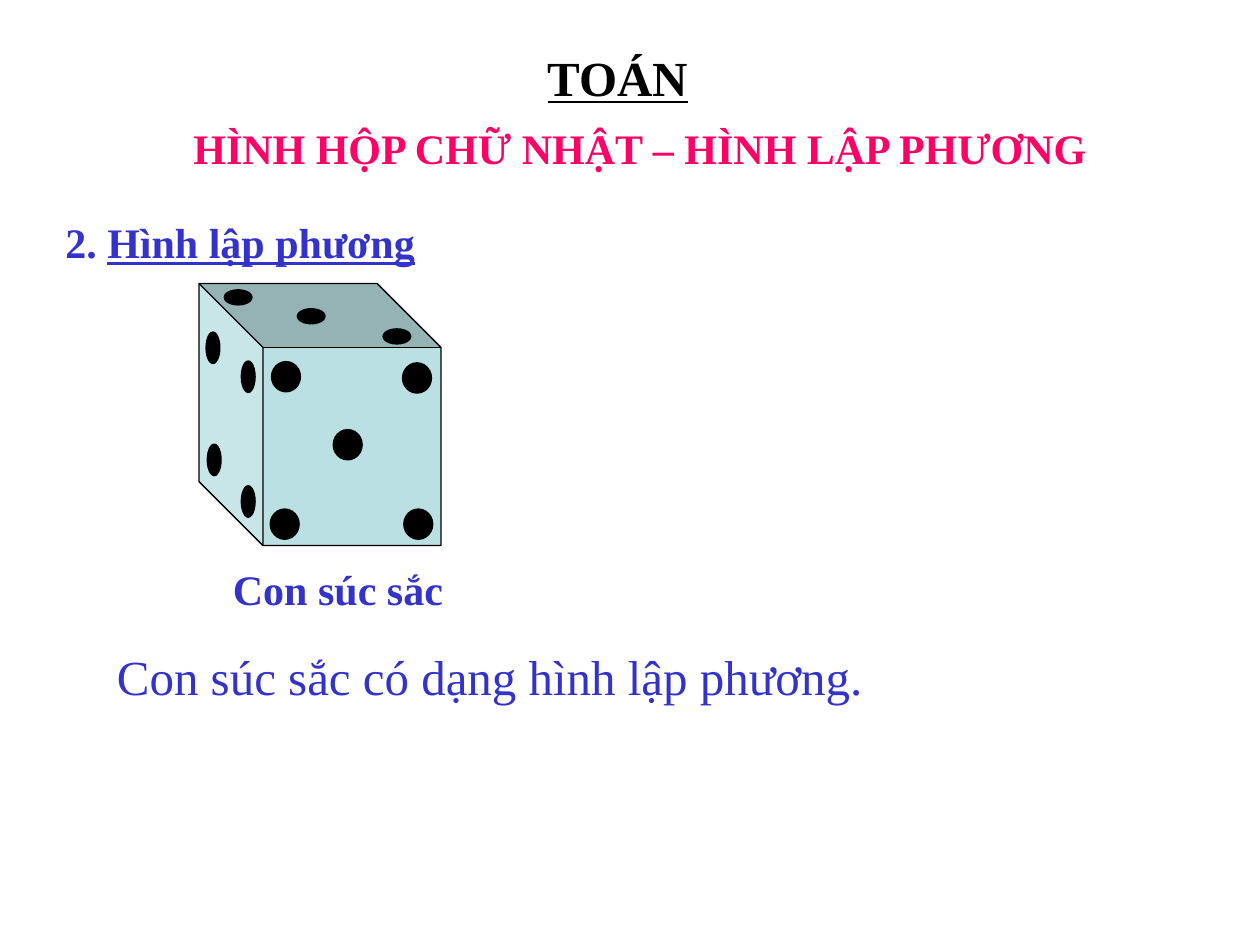
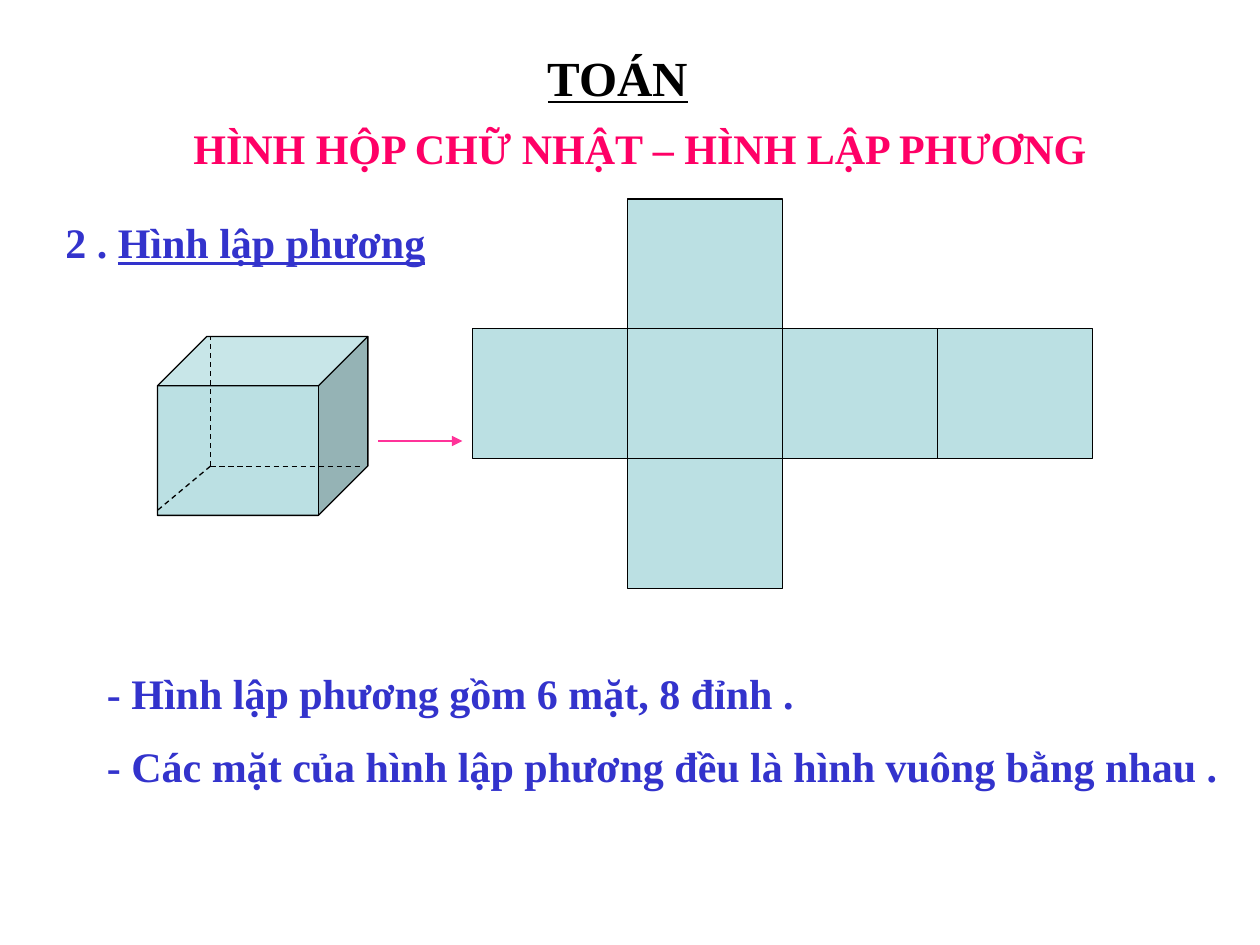
from pptx import Presentation
from pptx.dml.color import RGBColor
from pptx.enum.dml import MSO_LINE
from pptx.enum.shapes import MSO_CONNECTOR as Link, MSO_SHAPE as Kind
from pptx.enum.text import MSO_AUTO_SIZE as Fit, PP_ALIGN as Align
from pptx.oxml.ns import qn
from pptx.util import Inches, Pt
from lxml.etree import SubElement as Sub

BLACK = RGBColor(0x00, 0x00, 0x00)
BLUE = RGBColor(0x33, 0x33, 0xCC)
ROSE = RGBColor(0xFF, 0x00, 0x66)
PINK = RGBColor(0xFF, 0x33, 0x99)
AQUA = RGBColor(0xBB, 0xE0, 0xE3)
FACE = "Times New Roman"

BODY = {"size": Pt(24), "bold": True}
LARGE = {"size": Pt(28)}
LINE = {"underline": True}
HEAD = [
    ((4.25, 0.33, 1.67, 0.57), ["TOÁN"], {**LARGE, "bold": True, **LINE}, BLACK, Align.LEFT),
    ((1.33, 0.92, 7.5, 0.51), ["HÌNH HỘP CHỮ NHẬT – HÌNH LẬP PHƯƠNG"], BODY, ROSE, Align.CENTER),
]
TOPIC = (0.42, 1.67, 5.67, 0.51)
NAME = "Hình lập phương"
DICE = [
    (TOPIC, ["2. ", NAME], BODY),
    ((0.83, 5.08, 7.08, 0.57), ["Con súc sắc có dạng hình lập phương."], LARGE),
    ((1.75, 4.42, 2.75, 0.51), ["Con súc sắc"], BODY),
]
FACTS = [
    (TOPIC, ["2 . ", NAME], BODY),
    ((0.75, 5.25, 9.25, 0.51), ["- Hình lập phương gồm 6 mặt, 8 đỉnh ."], BODY),
    ((0.75, 5.83, 9.08, 0.51), ["- Các mặt của hình lập phương đều là hình vuông bằng nhau ."], BODY),
]

DOTS = {
    (0.23, 0.24): [(2.76, 3.53), (2.26, 4.16), (2.27, 2.99), (3.31, 3), (3.32, 4.16)],
    (0.11, 0.25): [(1.7, 3.65), (1.69, 2.76), (1.97, 3.98), (1.97, 2.99)],
    (0.22, 0.12): [(2.47, 2.51), (1.89, 2.36), (3.15, 2.67)],
}

CORNER = (1.67, 3.7)
HIDDEN = [(2.86, 3.7), (1.67, 2.67), (1.25, 4.05)]
NET = [(1, 1), (1, 0), (1, 2), (0, 1), (3, 1), (2, 1)]
LEFT, TOP, WIDE, HIGH = 3.75, 1.58, 1.23, 1.03


def write(slide, box, parts, form, tint=BLUE, side=Align.LEFT):
    frame = slide.shapes.add_textbox(*map(Inches, box)).text_frame
    frame.word_wrap, frame.auto_size = True, Fit.SHAPE_TO_FIT_TEXT
    para = frame.paragraphs[0]
    para.alignment = side
    space = Sub(para._p.get_or_add_pPr(), qn("a:spcBef"))
    Sub(space, qn("a:spcPct")).set("val", "50000")
    for rank, text in enumerate(parts):
        run = para.add_run()
        run.text = text
        for key, value in {**form, **(LINE if rank else {}), "name": FACE}.items():
            setattr(run.font, key, value)
        run.font.color.rgb = tint


def draw(slide, kind, box, tint=AQUA, turn=0, depth=None):
    shape = slide.shapes.add_shape(kind, *map(Inches, box))
    shape.shadow.inherit = False
    shape.fill.solid()
    shape.fill.fore_color.rgb = tint
    shape.line.color.rgb = BLACK
    shape.line.width = Pt(0.75)
    shape.rotation = turn
    if depth:
        shape.adjustments[0] = depth


def link(slide, start, end, tint=BLACK, dash=None, arrow=False):
    wire = slide.shapes.add_connector(Link.STRAIGHT, *map(Inches, start + end))
    wire.line.color.rgb = tint
    wire.line.width = Pt(0.75)
    wire.line.dash_style = dash
    if arrow:
        Sub(wire.line._get_or_add_ln(), qn("a:tailEnd")).set("type", "triangle")
    Sub(wire._element.spPr, qn("a:effectLst"))


def page(deck, texts):
    slide = deck.slides.add_slide(deck.slide_layouts[6])
    for item in HEAD + texts:
        write(slide, *item)
    return slide


def main():
    deck = Presentation()
    deck.slide_width, deck.slide_height = Inches(10), Inches(7.5)

    slide = page(deck, DICE)
    draw(slide, Kind.CUBE, (1.5, 2.33, 2.08, 1.92), turn=270, depth=0.264)
    for (wide, high), spots in DOTS.items():
        for x, y in spots:
            draw(slide, Kind.OVAL, (x - wide / 2, y - high / 2, wide, high), BLACK)

    slide = page(deck, FACTS)
    draw(slide, Kind.CUBE, (1.25, 2.67, 1.67, 1.42), depth=0.276)
    for end in HIDDEN:
        link(slide, CORNER, end, dash=MSO_LINE.DASH)
    link(slide, (3, 3.5), (3.67, 3.5), PINK, arrow=True)
    for col, row in NET:
        draw(slide, Kind.RECTANGLE, (LEFT + col * WIDE, TOP + row * HIGH, WIDE, HIGH))

    deck.save("out.pptx")


if __name__ == "__main__":
    main()
